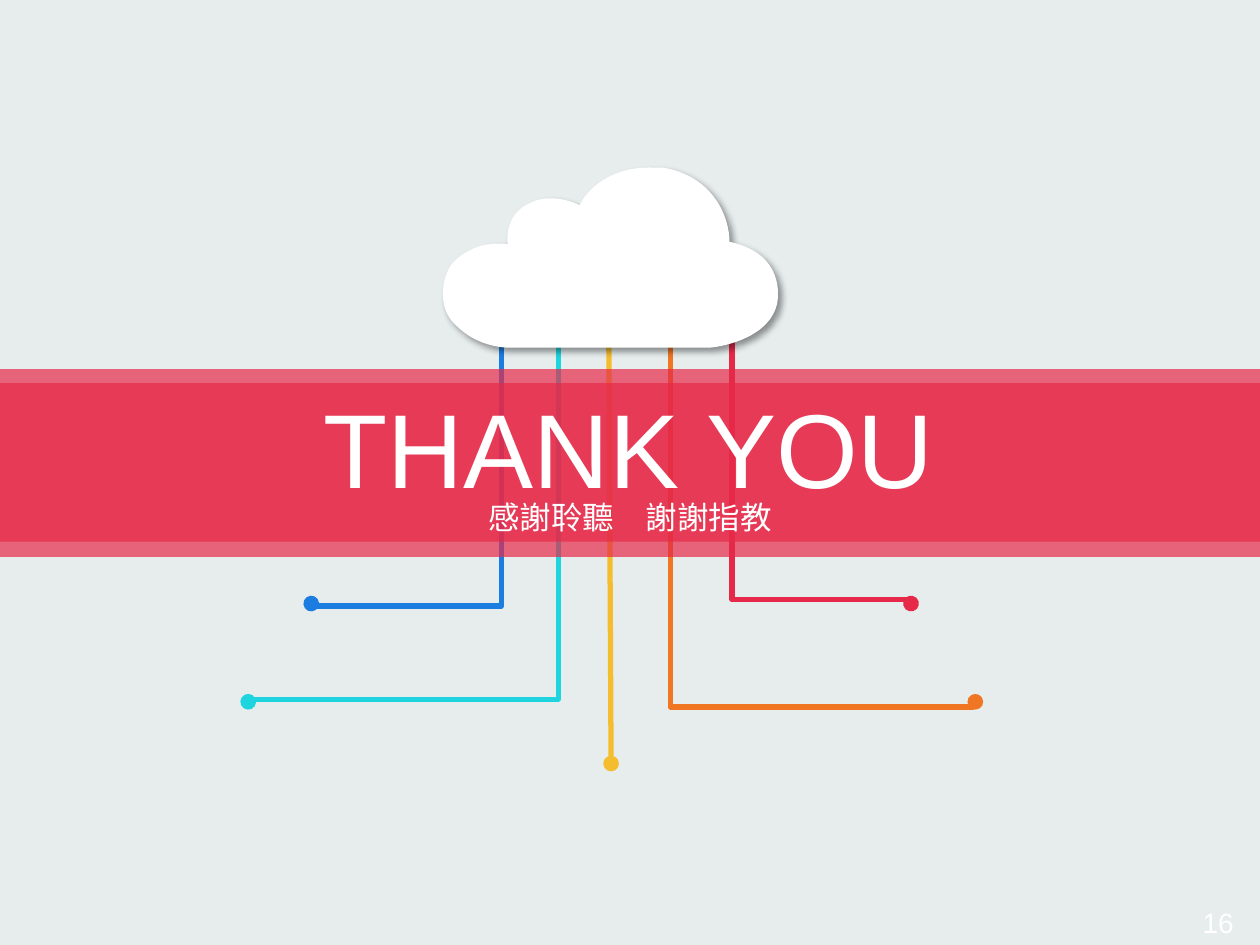
from lxml import etree
from pptx import Presentation
from pptx.dml.color import RGBColor
from pptx.enum.shapes import MSO_CONNECTOR, MSO_SHAPE
from pptx.enum.text import MSO_ANCHOR, PP_ALIGN
from pptx.oxml.ns import qn
from pptx.util import Pt

RECTANGLE = MSO_SHAPE.RECTANGLE
STRAIGHT, ELBOW = MSO_CONNECTOR.STRAIGHT, MSO_CONNECTOR.ELBOW
MIDDLE = MSO_ANCHOR.MIDDLE
CENTER, RIGHT = PP_ALIGN.CENTER, PP_ALIGN.RIGHT

EMU_PER_PX = 9144  # 100 px to the inch
FONT = "Arial"
WHITE, PALE, BLACK = "FFFFFF", "E7EDED", "000000"
RED, ORANGE, YELLOW, BLUE, CYAN = "E62949", "F07624", "F4BD2D", "1C7DE1", "1ED4DE"


def px(value):
    return round(value * EMU_PER_PX)


def color(hex_string):
    return RGBColor.from_string(hex_string)


def child(parent, tag, **attributes):
    return etree.SubElement(parent, qn(tag), {k: str(v) for k, v in attributes.items()})


class SlideBuilder:
    def __init__(self, slide):
        self.slide = slide
        self.shapes = slide.shapes

    def paint(self, shape, fill):
        shape.shadow.inherit = False
        shape.fill.solid()
        shape.fill.fore_color.rgb = color(fill)
        shape.line.fill.background()

    def rectangle(self, left, top, width, height, fill, opacity=100):
        shape = self.shapes.add_shape(RECTANGLE, px(left), px(top), px(width), px(height))
        self.paint(shape, fill)
        if opacity < 100:
            rgb = shape._element.spPr.find(".//" + qn("a:srgbClr"))
            child(rgb, "a:alpha", val=opacity * 1000)

    def connector(self, group, kind, start, end, stroke):
        connector = group.shapes.add_connector(kind, *map(px, (*start, *end)))
        connector.line.color.rgb = color(stroke)
        connector.line.width = Pt(3)
        child(connector.line._get_or_add_ln(), "a:tailEnd", type="oval")
        child(connector._element.spPr, "a:effectLst")
        return connector

    def wire(self, group, start, end, bend, stroke):
        """Elbow that leaves downwards, turns at height bend and ends in a dot."""
        (x1, y1), (x2, y2) = start, end
        to_right = x2 > x1
        center_x, center_y = (x1 + x2) / 2, (y1 + y2) / 2
        reach = (y2 - y1) / 2 * (1 if to_right else -1)
        half_height = abs(x2 - x1) / 2
        connector = self.connector(
            group, ELBOW,
            (center_x + reach, center_y - half_height),
            (center_x - reach, center_y + half_height),
            stroke,
        )
        properties = connector._element.spPr
        properties.find(qn("a:xfrm")).set("rot", str((270 if to_right else 90) * 60000))
        adjustments = properties.find(qn("a:prstGeom")).find(qn("a:avLst"))
        position = round((bend - y1) / (y2 - y1) * 100000)
        child(adjustments, "a:gd", name="adj1", fmla=f"val {position}")

    def text(self, left, top, width, height, words, size, align=CENTER):
        box = self.shapes.add_textbox(px(left), px(top), px(width), px(height))
        frame = box.text_frame
        frame.word_wrap = True
        frame.vertical_anchor = MIDDLE
        frame.text = words
        paragraph = frame.paragraphs[0]
        paragraph.alignment = align
        font = paragraph.runs[0].font
        font.name, font.size, font.color.rgb = FONT, Pt(size), color(WHITE)

    def cloud(self, left, top, width, height, start, segments, fill):
        """Outline of lines (one point) and cubic curves (three points)."""
        builder = self.shapes.build_freeform(*map(px, start), scale=1.0)
        points = [(px(x), px(y)) for segment in segments for x, y in segment]
        builder.add_line_segments(points, close=True)
        shape = builder.convert_to_shape()
        self.paint(shape, fill)

        # Fit the frame to the visible outline instead of the control points
        outline = shape._element.spPr.find(".//" + qn("a:path"))
        shift_x, shift_y = px(left) - shape.left, px(top) - shape.top
        for point in outline.iter(qn("a:pt")):
            point.set("x", str(int(point.get("x")) - shift_x))
            point.set("y", str(int(point.get("y")) - shift_y))
        shape.left, shape.top, shape.width, shape.height = map(px, (left, top, width, height))
        outline.set("w", str(px(width)))
        outline.set("h", str(px(height)))

        # Join each three points into one curve
        lines = iter(outline.findall(qn("a:lnTo")))
        for segment in segments:
            group = [next(lines) for _ in segment]
            if len(group) == 3:
                curve = etree.Element(qn("a:cubicBezTo"))
                group[0].addprevious(curve)
                for line in group:
                    curve.append(line[0])
                    outline.remove(line)

        effects = shape._element.spPr.find(qn("a:effectLst"))
        shadow = child(effects, "a:outerShdw", blurRad=Pt(4), dist=Pt(3),
                       dir=45 * 60000, algn="tl", rotWithShape=0)
        child(child(shadow, "a:srgbClr", val=BLACK), "a:alpha", val=40000)


def main():
    presentation = Presentation()
    presentation.slide_width, presentation.slide_height = px(1000), px(750)
    builder = SlideBuilder(presentation.slides.add_slide(presentation.slide_layouts[6]))

    # Background
    builder.rectangle(-2, -1, 1002, 751, PALE)

    # Wires hanging from the cloud
    wires = builder.shapes.add_group_shape()
    builder.wire(wires, (581, 264), (723, 479), 476, RED)
    builder.wire(wires, (532, 264), (774, 557), 561, ORANGE)
    builder.connector(wires, STRAIGHT, (483, 232), (485, 606), YELLOW)
    builder.wire(wires, (398, 264), (247, 479), 481, BLUE)
    builder.wire(wires, (443, 264), (197, 557), 555, CYAN)

    # Title band
    builder.rectangle(-3, 293, 1003, 149, RED, opacity=70)
    builder.rectangle(-2, 304, 1003, 126, RED, opacity=70)
    builder.text(-2, 299, 1002, 111, "THANK YOU", 60)
    builder.text(-1, 389, 1002, 42, "感謝聆聽　謝謝指教", 18)

    # Cloud
    builder.cloud(352, 133, 266, 143, (518, 133), [
        [(521, 133), (523, 133), (526, 133)],
        [(567, 140), (579, 173), (579, 192)],
        [(617, 200), (619, 227), (617, 240)],
        [(612, 267), (576, 275), (563, 276)],
        [(403, 276)],
        [(384, 275), (369, 267), (358, 254)],
        [(348, 241), (351, 222), (357, 212)],
        [(361, 205), (379, 190), (403, 194)],
        [(401, 180), (408, 167), (419, 162)],
        [(433, 154), (450, 158), (460, 163)],
        [(465, 152), (483, 132), (518, 133)],
    ], WHITE)

    # Slide number
    builder.text(889, 712, 100, 40, "16", 16, RIGHT)

    presentation.save("out.pptx")


if __name__ == "__main__":
    main()
